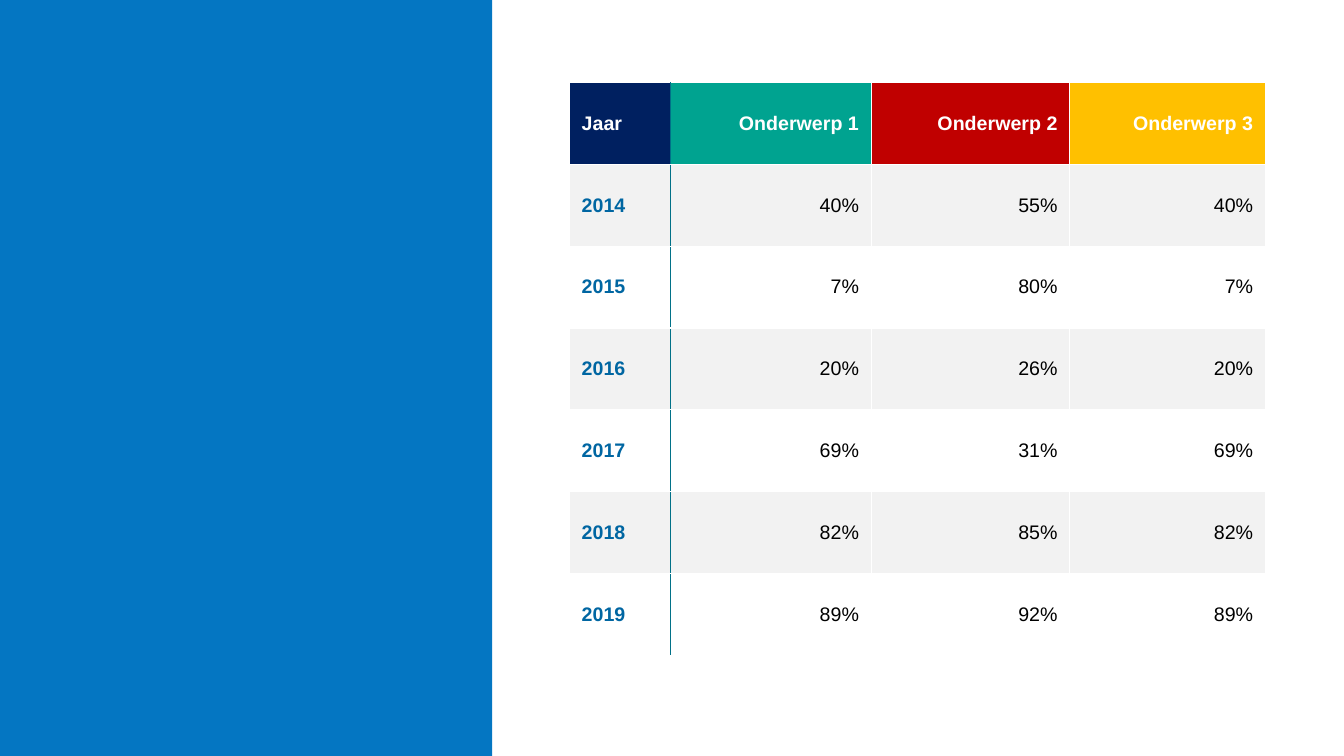
from lxml.etree import SubElement
from pptx import Presentation
from pptx.dml.color import RGBColor
from pptx.enum.shapes import MSO_SHAPE
from pptx.enum.text import MSO_ANCHOR, PP_ALIGN
from pptx.oxml.ns import qn
from pptx.util import Inches, Pt

WHITE = "FFFFFF"
BLACK = "000000"
BAND = "F2F2F2"
PANEL_BLUE = "0476C2"
YEAR_BLUE = "0066A2"
DIVIDER = "017188"

HEADERS = ["Jaar", "Onderwerp 1", "Onderwerp 2", "Onderwerp 3"]
HEADER_FILLS = ["002060", "00A390", "C00000", "FFC000"]
COLUMN_WIDTHS = [1, 1.99, 1.97, 1.94]
YEAR_ROWS = [
    ["2014", "40%", "55%", "40%"],
    ["2015", "7%", "80%", "7%"],
    ["2016", "20%", "26%", "20%"],
    ["2017", "69%", "31%", "69%"],
    ["2018", "82%", "85%", "82%"],
    ["2019", "89%", "92%", "89%"],
]


def colour(value):
    return RGBColor.from_string(value)


def add_panel(page, left, top, width, height, fill):
    panel = page.shapes.add_shape(
        MSO_SHAPE.RECTANGLE, Inches(left), Inches(top), Inches(width), Inches(height))
    panel.shadow.inherit = False
    panel.fill.solid()
    panel.fill.fore_color.rgb = colour(fill)
    panel.line.fill.background()


def set_borders(cell, **sides):
    """Draw 1 pt borders; must run before the cell fill is set."""
    properties = cell._tc.get_or_add_tcPr()
    for side in ("L", "R", "T", "B"):
        line = SubElement(properties, qn(f"a:ln{side}"), w=str(Pt(1)))
        fill = SubElement(line, qn("a:solidFill"))
        SubElement(fill, qn("a:srgbClr"), val=sides.get(side, WHITE))


def write_text(cell, text, size=14, color=BLACK, bold=False, align=PP_ALIGN.LEFT):
    para = cell.text_frame.paragraphs[0]
    para.alignment = align
    span = para.add_run()
    span.text = text
    span.font.name = "Arial"
    span.font.size = Pt(size)
    span.font.bold = bold
    span.font.color.rgb = colour(color)


def format_cell(cell, fill, **borders):
    set_borders(cell, **borders)
    cell.fill.solid()
    cell.fill.fore_color.rgb = colour(fill)
    cell.vertical_anchor = MSO_ANCHOR.MIDDLE
    cell.margin_left = cell.margin_right = Inches(0.12)
    cell.margin_top = cell.margin_bottom = Inches(0.12)


def add_year_table(page, left, top, height):
    rows = [HEADERS] + YEAR_ROWS
    table = page.shapes.add_table(
        len(rows), len(HEADERS), Inches(left), Inches(top),
        Inches(sum(COLUMN_WIDTHS)), Inches(height)).table
    for column, width in zip(table.columns, COLUMN_WIDTHS):
        column.width = Inches(width)

    # A divider separates the year column from the values
    dividers = {0: {"R": DIVIDER}, 1: {"L": DIVIDER}}
    for row_index, row in enumerate(rows):
        for column_index, text in enumerate(row):
            is_header = row_index == 0
            is_year = column_index == 0
            if is_header:
                fill, color = HEADER_FILLS[column_index], WHITE
            else:
                fill = BAND if row_index % 2 else WHITE
                color = YEAR_BLUE if is_year else BLACK
            cell = table.cell(row_index, column_index)
            format_cell(cell, fill, **dividers.get(column_index, {}))
            write_text(cell, text, color=color, bold=is_header or is_year,
                       align=PP_ALIGN.LEFT if is_year else PP_ALIGN.RIGHT)


def main():
    deck = Presentation()
    deck.slide_width = Inches(13.33)
    deck.slide_height = Inches(7.5)
    page = deck.slides.add_slide(deck.slide_layouts[6])

    # Blue panel on the left
    add_panel(page, -0.01, 0, 4.89, 7.5, PANEL_BLUE)

    # Percentages per year and subject
    add_year_table(page, 5.65, 0.82, 5.68)

    deck.save("out.pptx")


if __name__ == "__main__":
    main()
